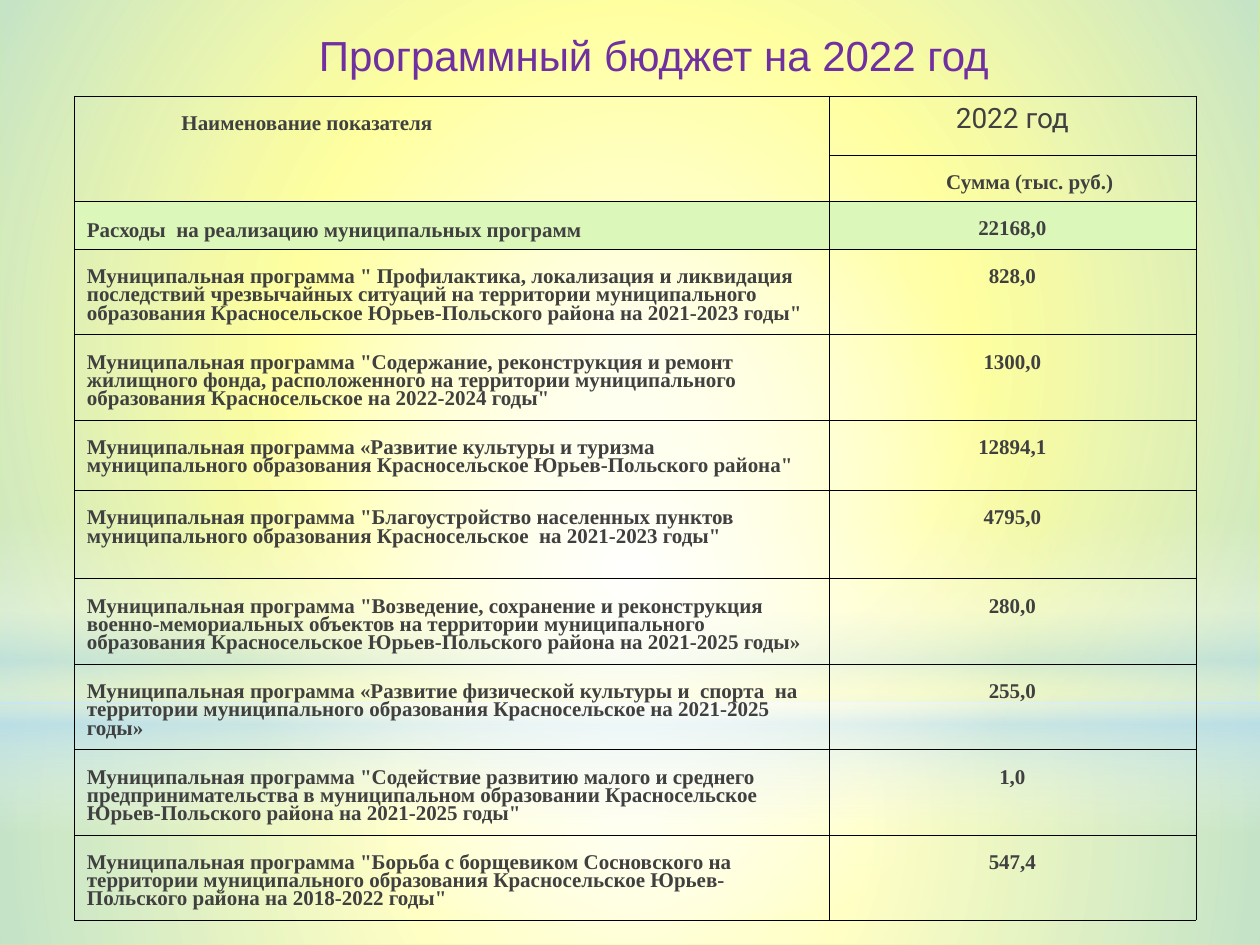
from dataclasses import dataclass
from typing import Optional

from lxml import etree
from pptx import Presentation, util as u
from pptx.dml.color import RGBColor
from pptx.enum import shapes, text
from pptx.oxml import ns

INK = "404040"
SERIF = "Times New Roman"
LEFT, CENTER = text.PP_ALIGN.LEFT, text.PP_ALIGN.CENTER
TOP, MIDDLE = text.MSO_ANCHOR.TOP, text.MSO_ANCHOR.MIDDLE


@dataclass
class Glow:
    """A background area with gradient stops of (position %, colour, opacity %)."""
    kind: shapes.MSO_SHAPE
    box: tuple[float, float, float, float]
    stops: list[tuple[int, str, int]]
    radial: bool = True


@dataclass
class CellStyle:
    align: text.PP_ALIGN = LEFT
    anchor: text.MSO_ANCHOR = TOP
    indent: float = 0
    top: float = 0.16
    spacing: float = 0.78
    font: str = SERIF
    size: int = 12
    bold: bool = True
    fill: Optional[str] = None


@dataclass
class Program:
    name: str
    amount: str
    height: float = 0.54


RECT, OVAL = shapes.MSO_SHAPE.RECTANGLE, shapes.MSO_SHAPE.OVAL
GLOWS = [
    Glow(RECT, (0, 5.58, 10, 1.92), [(0, "FFFFFF", 91), (37, "FFFFFF", 76), (100, "B4DCFA", 79)]),
    Glow(RECT, (0, 0, 10, 5.58), [(0, "FFFFFF", 89), (48, "FFFFFF", 62), (100, "B4DCFA", 79)]),
    Glow(RECT, (0, 4.12, 10, 2.5),
         [(0, "FFFFFF", 0), (29, "FFFFFF", 30), (45, "B4DCFA", 40),
          (55, "FFFFFF", 26), (65, "B4DCFA", 60), (100, "FFFFFF", 0)], radial=False),
    Glow(OVAL, (0, 1.75, 10, 5.58), [(0, "FFFFFF", 100), (56, "FFFFFF", 0)]),
]

PROGRAMS = [
    Program('Муниципальная программа " Профилактика, локализация и ликвидация последствий '
            'чрезвычайных ситуаций на территории муниципального образования Красносельское '
            'Юрьев-Польского района на 2021-2023 годы"', "828,0"),
    Program('Муниципальная программа "Содержание, реконструкция и ремонт жилищного фонда, '
            'расположенного на территории муниципального образования Красносельское '
            'на 2022-2024 годы"', "1300,0"),
    Program('Муниципальная программа «Развитие культуры и туризма муниципального образования '
            'Красносельское Юрьев-Польского района"', "12894,1", 0.56),
    Program('Муниципальная программа "Благоустройство населенных пунктов муниципального '
            'образования Красносельское  на 2021-2023 годы"', "4795,0", 0.7),
    Program('Муниципальная программа "Возведение, сохранение и реконструкция '
            'военно-мемориальных объектов на территории муниципального образования '
            'Красносельское Юрьев-Польского района на 2021-2025 годы»', "280,0"),
    Program('Муниципальная программа «Развитие физической культуры и  спорта  на территории '
            'муниципального образования Красносельское на 2021-2025 годы»', "255,0"),
    Program('Муниципальная программа "Содействие развитию малого и среднего '
            'предпринимательства в муниципальном образовании Красносельское '
            'Юрьев-Польского района на 2021-2025 годы"', "1,0"),
    Program('Муниципальная программа "Борьба с борщевиком Сосновского на территории '
            'муниципального образования Красносельское Юрьев-Польского района '
            'на 2018-2022 годы"', "547,4", 0.4),
]


def rgb(value: str) -> RGBColor:
    return RGBColor.from_string(value)


def set_all(target, values: dict) -> None:
    for key, value in values.items():
        setattr(target, key, value)


def add(parent, tag: str, **attributes):
    return etree.SubElement(parent, ns.qn(tag), attributes)


def draw_glow(slide, glow: Glow) -> None:
    area = slide.shapes.add_shape(glow.kind, *map(u.Inches, glow.box))
    area.shadow.inherit = False
    area.line.fill.background()
    area.fill.background()
    properties = area._element.spPr
    empty_fill = properties.find(ns.qn("a:noFill"))
    gradient = etree.Element(ns.qn("a:gradFill"), rotWithShape="1")
    stop_list = add(gradient, "a:gsLst")
    for position, color, opacity in glow.stops:
        stop = add(stop_list, "a:gs", pos=str(position * 1000))
        shade = add(stop, "a:srgbClr", val=color)
        add(shade, "a:alpha", val=str(opacity * 1000))
    if glow.radial:
        circle = add(gradient, "a:path", path="circle")
        add(circle, "a:fillToRect", l="50000", t="50000", r="50000", b="50000")
    else:
        add(gradient, "a:lin", ang="5400000", scaled="0")
    properties.replace(empty_fill, gradient)


def draw_title(slide, title: str) -> None:
    frame = slide.shapes.add_textbox(*map(u.Inches, (0.51, 0.12, 8.8, 0.63))).text_frame
    set_all(frame, {"word_wrap": True, "vertical_anchor": MIDDLE,
                    "margin_left": u.Inches(0.66)})
    heading = frame.paragraphs[0]
    heading.alignment = CENTER
    run = heading.add_run()
    run.text = title
    set_all(run.font, {"name": "Arial", "size": u.Pt(24), "bold": False})
    run.font.color.rgb = rgb("7030A0")


def add_borders(cell) -> None:
    properties = cell._tc.get_or_add_tcPr()
    for index, side in enumerate(("a:lnL", "a:lnR", "a:lnT", "a:lnB")):
        edge = etree.Element(ns.qn(side), w=str(u.Pt(0.06)))
        add(add(edge, "a:solidFill"), "a:srgbClr", val="000000")
        properties.insert(index, edge)


def fill_cell(cell, words: str, style: CellStyle) -> None:
    set_all(cell, {"margin_left": u.Inches(0.1 + style.indent), "margin_right": u.Inches(0.1),
                   "margin_top": u.Inches(style.top), "margin_bottom": u.Inches(0.05),
                   "vertical_anchor": style.anchor})
    line = cell.text_frame.paragraphs[0]
    set_all(line, {"alignment": style.align, "line_spacing": style.spacing})
    run = line.add_run()
    run.text = words
    set_all(run.font, {"name": style.font, "size": u.Pt(style.size), "bold": style.bold})
    run.font.color.rgb = rgb(INK)
    if style.fill:
        cell.fill.solid()
        cell.fill.fore_color.rgb = rgb(style.fill)


def draw_budget(slide) -> None:
    heights = [0.47, 0.3, 0.38] + [program.height for program in PROGRAMS]
    frame = slide.shapes.add_table(len(heights), 2, *map(u.Inches, (0.59, 0.76, 8.9, sum(heights))))
    budget = frame.table
    set_all(budget, {"first_row": False, "horz_banding": False})
    for column, width in zip(budget.columns, (5.99, 2.91)):
        column.width = u.Inches(width)
    for row, height in zip(budget.rows, heights):
        row.height = u.Inches(height)
    for cell in budget.iter_cells():
        cell.fill.background()
        add_borders(cell)

    # Two-level header
    budget.cell(0, 0).merge(budget.cell(1, 0))
    fill_cell(budget.cell(0, 0), "Наименование показателя", CellStyle(indent=0.75))
    fill_cell(budget.cell(0, 1), "2022 год",
              CellStyle(CENTER, top=0.05, spacing=1.01, font="Roboto", size=16, bold=False))
    fill_cell(budget.cell(1, 1), "Сумма (тыс. руб.)", CellStyle(indent=0.83))

    # Total
    total_fill = "DCF7BA"
    fill_cell(budget.cell(2, 0), "Расходы  на реализацию муниципальных программ",
              CellStyle(anchor=MIDDLE, fill=total_fill))
    fill_cell(budget.cell(2, 1), "22168,0", CellStyle(CENTER, fill=total_fill))

    # Programs
    for row, program in enumerate(PROGRAMS, start=3):
        fill_cell(budget.cell(row, 0), program.name, CellStyle())
        fill_cell(budget.cell(row, 1), program.amount, CellStyle(CENTER))


def main() -> None:
    deck = Presentation()
    set_all(deck, {"slide_width": u.Inches(10), "slide_height": u.Inches(7.5)})
    slide = deck.slides.add_slide(deck.slide_layouts[6])

    # Background
    slide.background.fill.solid()
    slide.background.fill.fore_color.rgb = rgb("FFFF00")
    for glow in GLOWS:
        draw_glow(slide, glow)

    # Content
    draw_title(slide, "Программный бюджет на 2022 год")
    draw_budget(slide)
    deck.save("out.pptx")


if __name__ == "__main__":
    main()
